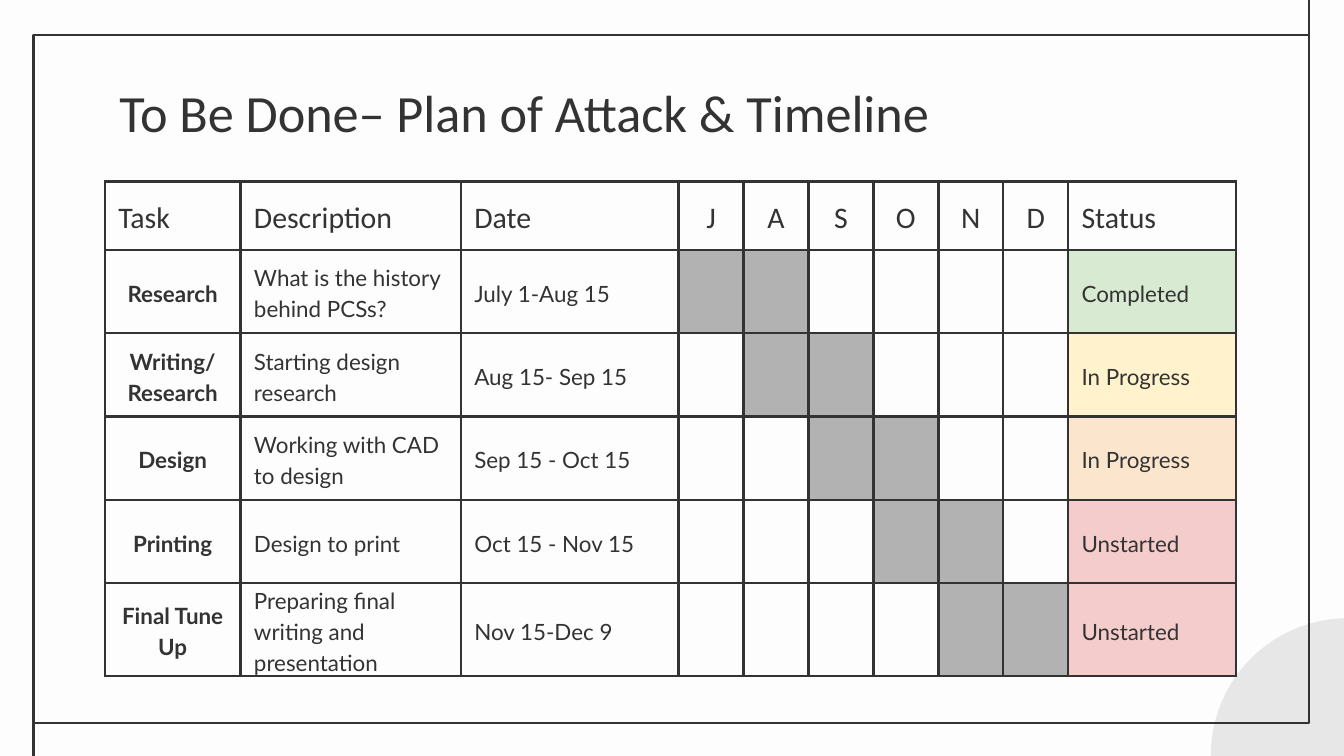
from lxml import etree
from pptx import Presentation
from pptx.dml.color import RGBColor
from pptx.enum import shapes, text
from pptx.oxml import ns
from pptx.util import Inches, Pt

INK = RGBColor(0x33, 0x33, 0x33)
PAPER = RGBColor(0xFD, 0xFD, 0xFD)
DISC = RGBColor(0xE8, 0xE7, 0xE7)
ACTIVE = RGBColor(0xB2, 0xB2, 0xB2)
GREEN = RGBColor(0xD9, 0xEA, 0xD3)
YELLOW = RGBColor(0xFF, 0xF2, 0xCC)
ORANGE = RGBColor(0xFC, 0xE5, 0xCD)
RED = RGBColor(0xF4, 0xCC, 0xCC)

TITLE = "To Be Done– Plan of Attack & Timeline"
MONTHS = "JASOND"
HEADER = ["Task", "Description", "Date", *MONTHS, "Status"]
# task, description, date, active months, status, status colour
TASKS = [
    ("Research", "What is the history behind PCSs?", "July 1-Aug 15", "JA", "Completed", GREEN),
    ("Writing/\nResearch", "Starting design research", "Aug 15- Sep 15", "AS", "In Progress", YELLOW),
    ("Design", "Working with CAD to design", "Sep 15 - Oct 15", "SO", "In Progress", ORANGE),
    ("Printing", "Design to print", "Oct 15 - Nov 15", "ON", "Unstarted", RED),
    ("Final Tune Up", "Preparing final writing and presentation", "Nov 15-Dec 9", "ND", "Unstarted", RED),
]
MONTHS_WIDTH = 2.9
COLUMN_WIDTHS = [1.01, 1.64, 1.62] + [MONTHS_WIDTH / len(MONTHS)] * len(MONTHS) + [1.25]
ROW_HEIGHTS = [0.51, 0.62, 0.62, 0.62, 0.62, 0.69]
FIRST_MONTH = 3
LINE_WIDTH = Pt(1.5)
SLIDE_WIDTH = Inches(10)
SLIDE_HEIGHT = SLIDE_WIDTH * 9 // 16
FRAME_LEFT, FRAME_TOP = Inches(0.25), Inches(0.26)
FRAME_WIDTH, FRAME_HEIGHT = Inches(9.49), Inches(5.12)


def style_runs(frame, size, font, bold=False):
    for paragraph in frame.paragraphs:
        for run in paragraph.runs:
            run.font.size = Pt(size)
            run.font.name = font
            run.font.bold = bold
            run.font.color.rgb = INK


def add_vertical_line(slide, x, start, end):
    line = slide.shapes.add_connector(shapes.MSO_CONNECTOR.STRAIGHT, x, start, x, end)
    line.line.color.rgb = INK
    line.line.width = LINE_WIDTH
    etree.SubElement(line._element.spPr, ns.qn("a:effectLst"))


def add_backdrop(slide):
    slide.background.fill.solid()
    slide.background.fill.fore_color.rgb = PAPER
    disc = slide.shapes.add_shape(
        shapes.MSO_SHAPE.OVAL, Inches(9.01), Inches(4.6), Inches(2.04), Inches(2.04))
    disc.shadow.inherit = False
    disc.fill.solid()
    disc.fill.fore_color.rgb = DISC
    disc.line.fill.background()
    add_vertical_line(slide, FRAME_LEFT + FRAME_WIDTH, FRAME_TOP, 0)
    add_vertical_line(slide, FRAME_LEFT, SLIDE_HEIGHT, FRAME_TOP + FRAME_HEIGHT)
    frame = slide.shapes.add_shape(
        shapes.MSO_SHAPE.RECTANGLE, FRAME_LEFT, FRAME_TOP, FRAME_WIDTH, FRAME_HEIGHT)
    frame.shadow.inherit = False
    frame.fill.background()
    frame.line.color.rgb = INK
    frame.line.width = LINE_WIDTH


def add_title(slide):
    title = slide.shapes.add_textbox(Inches(0.79), Inches(0.5), Inches(8.43), Inches(0.63))
    frame = title.text_frame
    frame.word_wrap = True
    frame.margin_left = frame.margin_right = frame.margin_top = frame.margin_bottom = Inches(0.1)
    frame.text = TITLE
    style_runs(frame, 28, "Calibri")


def add_borders(cell):
    properties = cell._tc.get_or_add_tcPr()
    for position, side in enumerate(("lnL", "lnR", "lnT", "lnB")):
        border = etree.Element(ns.qn(f"a:{side}"), w=str(int(LINE_WIDTH)))
        fill = etree.SubElement(border, ns.qn("a:solidFill"))
        etree.SubElement(fill, ns.qn("a:srgbClr"), val=str(INK))
        properties.insert(position, border)


def fill_cell(cell, content, color, header, centred, bold):
    if color is None:
        cell.fill.background()
    else:
        cell.fill.solid()
        cell.fill.fore_color.rgb = color
    add_borders(cell)
    cell.vertical_anchor = text.MSO_ANCHOR.MIDDLE
    cell.margin_left = cell.margin_right = Inches(0.1)
    cell.margin_top = cell.margin_bottom = Inches(0.1 if header else 0)
    if not content:
        return
    cell.text_frame.text = content
    for paragraph in cell.text_frame.paragraphs:
        paragraph.line_spacing = 1.15
        paragraph.alignment = text.PP_ALIGN.CENTER if centred else text.PP_ALIGN.LEFT
    style_runs(cell.text_frame, 16 if header else 12, "Calibri" if header else "Lato", bold)


def add_timeline(slide):
    table = slide.shapes.add_table(
        len(ROW_HEIGHTS), len(COLUMN_WIDTHS), Inches(0.78), Inches(1.35),
        Inches(sum(COLUMN_WIDTHS)), Inches(sum(ROW_HEIGHTS))).table
    table.first_row = table.horz_banding = False
    for column, width in zip(table.columns, COLUMN_WIDTHS):
        column.width = Inches(width)
    for row, height in zip(table.rows, ROW_HEIGHTS):
        row.height = Inches(height)

    for index, label in enumerate(HEADER):
        is_month = FIRST_MONTH <= index < FIRST_MONTH + len(MONTHS)
        fill_cell(table.cell(0, index), label, None, True, is_month, False)
    for row_index, (task, description, date, active, status, color) in enumerate(TASKS, 1):
        contents = [task, description, date, *[""] * len(MONTHS), status]
        month_fills = [ACTIVE if month in active else None for month in MONTHS]
        fills = [None] * FIRST_MONTH + month_fills + [color]
        for index, (content, fill) in enumerate(zip(contents, fills)):
            is_task = index == 0
            fill_cell(table.cell(row_index, index), content, fill, False, is_task, is_task)


def main():
    presentation = Presentation()
    presentation.slide_width = SLIDE_WIDTH
    presentation.slide_height = SLIDE_HEIGHT
    slide = presentation.slides.add_slide(presentation.slide_layouts[6])
    add_backdrop(slide)
    add_title(slide)
    add_timeline(slide)
    presentation.save("out.pptx")


if __name__ == "__main__":
    main()
